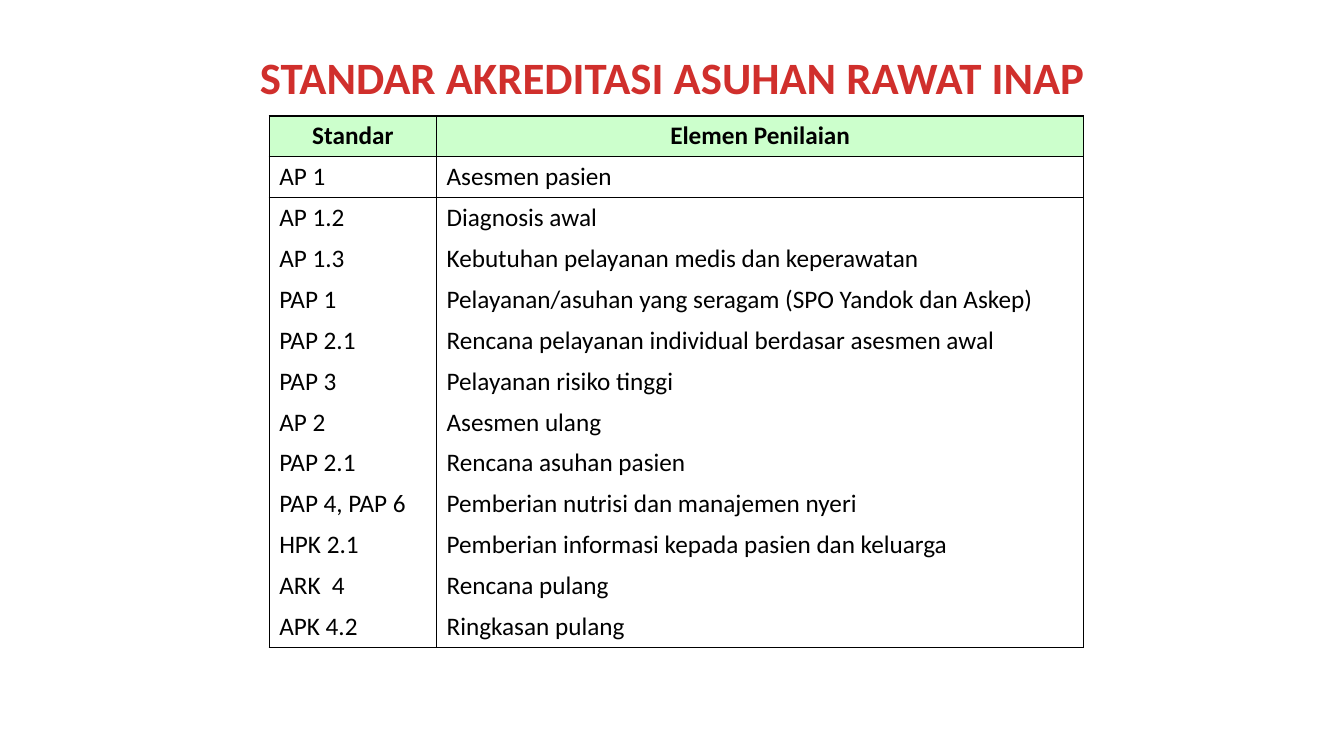
from lxml.etree import SubElement
from pptx import Presentation
from pptx.dml.color import RGBColor
from pptx.enum.text import MSO_ANCHOR, PP_ALIGN
from pptx.oxml.ns import qn
from pptx.util import Inches, Pt

COLORS = {"title": "D02F2C", "header": "CCFFCC", "body": "FFFFFF", "ink": "000000"}
FONT = "Calibri"
STANDARDS = [
    ("Standar", "Elemen Penilaian"),
    ("AP 1", "Asesmen pasien"),
    ("AP 1.2", "Diagnosis awal"),
    ("AP 1.3", "Kebutuhan pelayanan medis dan keperawatan"),
    ("PAP 1", "Pelayanan/asuhan yang seragam (SPO Yandok dan Askep)"),
    ("PAP 2.1", "Rencana pelayanan individual berdasar asesmen awal"),
    ("PAP 3", "Pelayanan risiko tinggi"),
    ("AP 2", "Asesmen ulang"),
    ("PAP 2.1", "Rencana asuhan pasien"),
    ("PAP 4, PAP 6", "Pemberian nutrisi dan manajemen nyeri"),
    ("HPK 2.1", "Pemberian informasi kepada pasien dan keluarga"),
    ("ARK  4", "Rencana pulang"),
    ("APK 4.2", "Ringkasan pulang"),
]


def style_paragraph(paragraph, size, color, bold, alignment):
    paragraph.alignment = alignment
    paragraph.font.name = FONT
    paragraph.font.size = Pt(size)
    paragraph.font.bold = bold
    paragraph.font.color.rgb = RGBColor.from_string(COLORS[color])


def set_borders(cell, visible_sides):
    properties = cell._tc.get_or_add_tcPr()
    for position, side in enumerate("LRTB"):
        line = SubElement(properties, qn(f"a:ln{side}"), w=str(Pt(1)))
        if side in visible_sides:
            fill = SubElement(line, qn("a:solidFill"))
            SubElement(fill, qn("a:srgbClr"), val=COLORS["ink"])
        else:
            SubElement(line, qn("a:noFill"))
        properties.insert(position, line)


deck = Presentation()
deck.slide_width = Inches(13.33)
deck.slide_height = Inches(7.5)
page = deck.slides.add_slide(deck.slide_layouts[5])

title = page.shapes.title
title.left, title.top = Inches(2.39), Inches(0.44)
title.width, title.height = Inches(8.56), Inches(0.64)
title.text_frame.text = "STANDAR AKREDITASI ASUHAN RAWAT INAP"
title.text_frame.word_wrap = False
title.text_frame.vertical_anchor = MSO_ANCHOR.TOP
style_paragraph(title.text_frame.paragraphs[0], 32, "title", True, PP_ALIGN.CENTER)

frame = page.shapes.add_table(
    len(STANDARDS), 2, Inches(2.67), Inches(1.15), Inches(8.08), Inches(5.27)
)
table = frame.table
table.first_row = True
table.horz_banding = False
table.columns[0].width = Inches(1.66)
table.columns[1].width = Inches(6.42)

last_row = len(STANDARDS) - 1
for row_index, entries in enumerate(STANDARDS):
    is_header = row_index == 0
    sides = "LR"
    if row_index in (0, 1, 2):
        sides += "T"
    if row_index in (0, 1, last_row):
        sides += "B"
    for column_index, entry in enumerate(entries):
        cell = table.cell(row_index, column_index)
        cell.text = entry
        cell.fill.solid()
        cell.fill.fore_color.rgb = RGBColor.from_string(
            COLORS["header" if is_header else "body"]
        )
        alignment = PP_ALIGN.CENTER if is_header else PP_ALIGN.LEFT
        style_paragraph(cell.text_frame.paragraphs[0], 18, "ink", is_header, alignment)
        set_borders(cell, sides)

deck.save("out.pptx")
